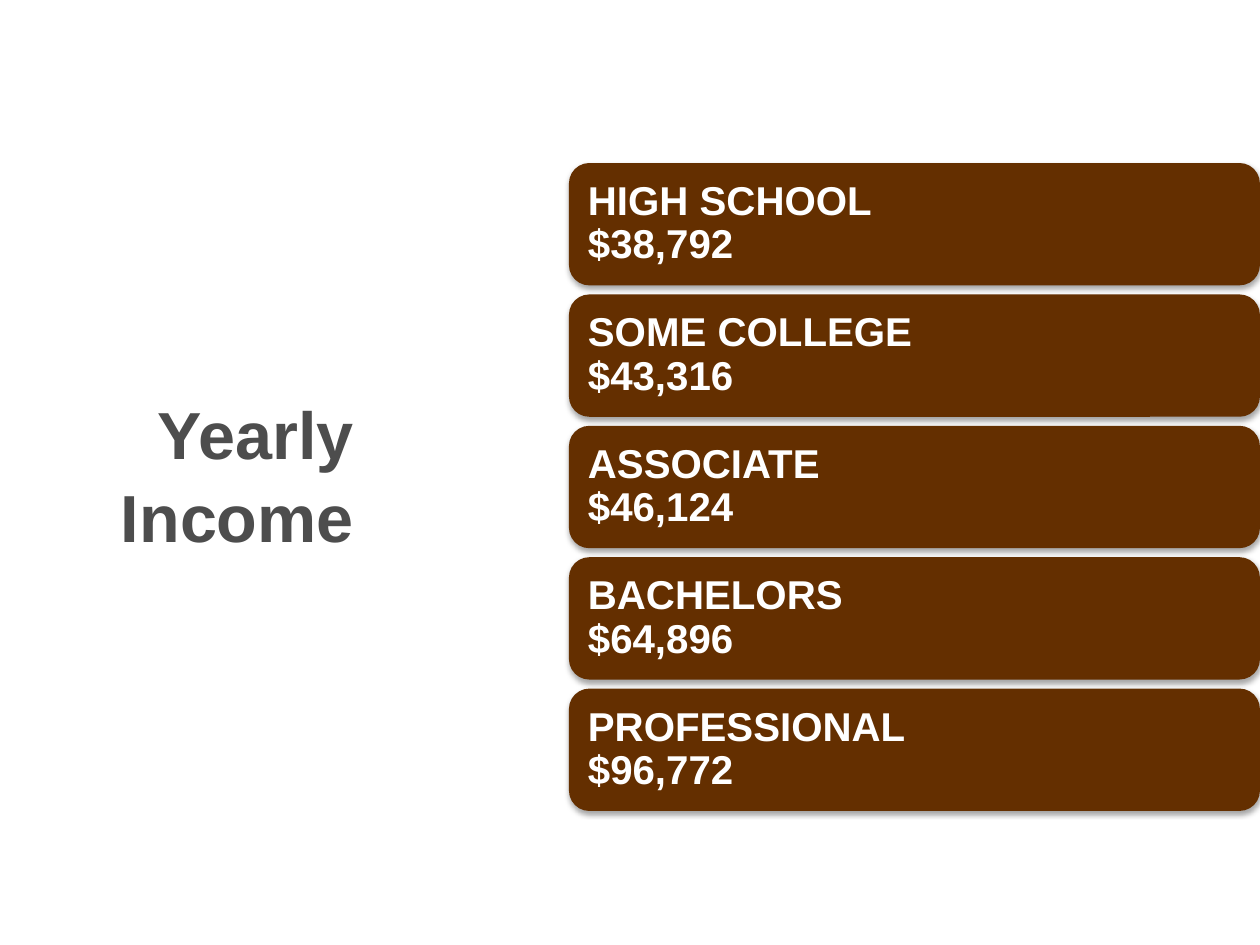
from lxml import etree
from pptx import Presentation
from pptx.dml.color import RGBColor
from pptx.enum.shapes import MSO_SHAPE
from pptx.enum.text import MSO_ANCHOR, PP_ALIGN
from pptx.oxml.ns import qn
from pptx.util import Pt

ROUND = MSO_SHAPE.ROUNDED_RECTANGLE
MIDDLE = MSO_ANCHOR.MIDDLE
LEFT, RIGHT = PP_ALIGN.LEFT, PP_ALIGN.RIGHT
BROWN = RGBColor(0x64, 0x2F, 0x00)
GREY = RGBColor(0x4D, 0x4D, 0x4D)
WHITE = RGBColor(0xFF, 0xFF, 0xFF)
SCALE = 914400 / 126
FONT = "Arial"
GAP = 9
LEVELS = [
    ("HIGH SCHOOL", "$38,792"),
    ("SOME COLLEGE", "$43,316"),
    ("ASSOCIATE", "$46,124"),
    ("BACHELORS", "$64,896"),
    ("PROFESSIONAL", "$96,772"),
]


def px(size):
    return round(size * SCALE)


def add_run(para, text, size, color):
    run = para.add_run()
    run.text = text
    font = run.font
    font.name = FONT
    font.size = Pt(size)
    font.bold = True
    font.color.rgb = color


def set_frame(shape, align, spacing):
    frame = shape.text_frame
    frame.word_wrap = True
    frame.vertical_anchor = MIDDLE
    frame.margin_left = frame.margin_right = px(13)
    para = frame.paragraphs[0]
    para.alignment = align
    para.line_spacing = spacing
    return para


def add_shadow(shape):
    shape.shadow.inherit = False
    effects = shape._element.spPr.find(qn("a:effectLst"))
    outer = etree.SubElement(
        effects, qn("a:outerShdw"), blurRad=str(Pt(3.1)), dist=str(Pt(1.8)),
        dir="5400000", rotWithShape="0")
    color = etree.SubElement(outer, qn("a:srgbClr"), val="000000")
    etree.SubElement(color, qn("a:alpha"), val="35000")


def add_title(slide, left, top, width, height):
    box = slide.shapes.add_textbox(px(left), px(top), px(width), px(height))
    para = set_frame(box, RIGHT, 1.05)
    add_run(para, "Yearly Income", 38, GREY)


def add_bar(slide, left, top, width, height, level, income):
    bar = slide.shapes.add_shape(
        ROUND, px(left), px(top), px(width), px(height))
    bar.fill.solid()
    bar.fill.fore_color.rgb = BROWN
    bar.line.fill.background()
    add_shadow(bar)
    para = set_frame(bar, LEFT, 0.9)
    add_run(para, level, 23, WHITE)
    para.add_line_break()
    add_run(para, income, 23, WHITE)


def add_list(slide, left, top, width, height):
    pitch = (height + GAP) / len(LEVELS)
    for row, (level, income) in enumerate(LEVELS):
        add_bar(slide, left, top + row * pitch, width, pitch - GAP,
                level, income)


def main():
    deck = Presentation()
    deck.slide_width = px(1260)
    deck.slide_height = px(945)
    slide = deck.slides.add_slide(deck.slide_layouts[6])
    add_title(slide, 0, 190, 367, 565)
    add_list(slide, 569, 163, 691, 648)
    deck.save("out.pptx")


if __name__ == "__main__":
    main()
